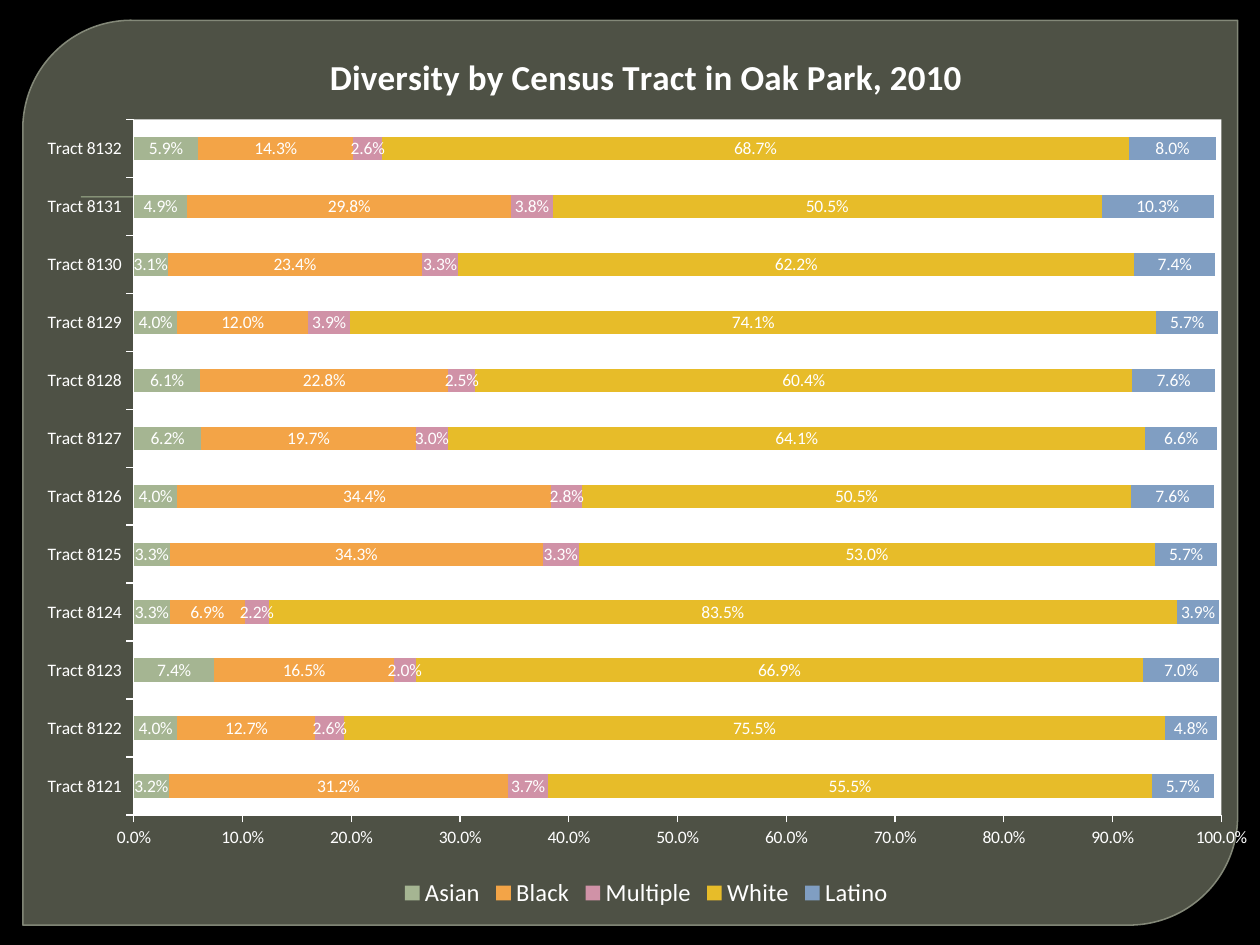
from lxml.etree import SubElement
from pptx import Presentation
from pptx.chart.data import CategoryChartData
from pptx.dml.color import RGBColor
from pptx.enum.chart import XL_CHART_TYPE, XL_LABEL_POSITION, XL_LEGEND_POSITION, XL_TICK_MARK
from pptx.enum.shapes import MSO_SHAPE
from pptx.oxml import parse_xml
from pptx.oxml.ns import nsdecls, qn
from pptx.util import Cm, Pt

BLACK = RGBColor(0x00, 0x00, 0x00)
WHITE = RGBColor(0xFF, 0xFF, 0xFF)
OLIVE = RGBColor(0x78, 0x7D, 0x6B)
OLIVE_EDGE = RGBColor(0x8F, 0x94, 0x83)
SAGE = RGBColor(0xA5, 0xB5, 0x92)
ORANGE = RGBColor(0xF3, 0xA4, 0x47)
ROSE = RGBColor(0xD0, 0x92, 0xA7)
GOLD = RGBColor(0xE7, 0xBC, 0x29)
BLUE = RGBColor(0x80, 0x9E, 0xC2)

FONT = "Calibri"
PERCENT = "0.0%"
TITLE = "Diversity by Census Tract in Oak Park, 2010"
TRACTS = [f"Tract {number}" for number in range(8121, 8133)]
GROUPS = [
    ("Asian", SAGE, [3.2, 4.0, 7.4, 3.3, 3.3, 4.0, 6.2, 6.1, 4.0, 3.1, 4.9, 5.9]),
    ("Black", ORANGE, [31.2, 12.7, 16.5, 6.9, 34.3, 34.4, 19.7, 22.8, 12.0, 23.4, 29.8, 14.3]),
    ("Multiple", ROSE, [3.7, 2.6, 2.0, 2.2, 3.3, 2.8, 3.0, 2.5, 3.9, 3.3, 3.8, 2.6]),
    ("White", GOLD, [55.5, 75.5, 66.9, 83.5, 53.0, 50.5, 64.1, 60.4, 74.1, 62.2, 50.5, 68.7]),
    ("Latino", BLUE, [5.7, 4.8, 7.0, 3.9, 5.7, 7.6, 6.6, 7.6, 5.7, 7.4, 10.3, 8.0]),
]
PLOT_LAYOUT = {"x": 0.09, "y": 0.11, "w": 0.87, "h": 0.78}


def set_font(font, size, bold=False):
    font.name = FONT
    font.size = Pt(size)
    font.bold = bold
    font.color.rgb = WHITE


def set_opacity(color_parent, percent):
    color = color_parent.find(f".//{qn('a:srgbClr')}")
    SubElement(color, qn("a:alpha"), val=str(percent * 1000))


def add_panel(slide):
    panel = slide.shapes.add_shape(
        MSO_SHAPE.ROUND_2_DIAG_RECTANGLE, Cm(0.46), Cm(0.41), Cm(24.49), Cm(18.24))
    panel.adjustments[0] = 0.12
    panel.adjustments[1] = 0
    panel.shadow.inherit = False
    panel.fill.solid()
    panel.fill.fore_color.rgb = OLIVE
    panel.line.color.rgb = OLIVE_EDGE
    panel.line.width = Pt(0.87)
    properties = panel._element.spPr
    set_opacity(properties.find(qn("a:solidFill")), 65)
    set_opacity(properties.find(qn("a:ln")), 88)


def add_rule(slide):
    rule = slide.shapes.add_shape(MSO_SHAPE.RECTANGLE, Cm(1.63), Cm(3.96), Cm(22.23), Cm(0.02))
    rule.shadow.inherit = False
    rule.fill.solid()
    rule.fill.fore_color.rgb = SAGE
    rule.line.fill.background()


def format_plot_area(chart):
    plot_area = chart._chartSpace.chart.plotArea
    for layout in plot_area.findall(qn("c:layout")):
        plot_area.remove(layout)
    modes = '<c:xMode val="edge"/><c:yMode val="edge"/>'
    sizes = "".join(f'<c:{key} val="{value}"/>' for key, value in PLOT_LAYOUT.items())
    plot_area.insert(0, parse_xml(
        f'<c:layout {nsdecls("c")}><c:manualLayout><c:layoutTarget val="inner"/>'
        f'{modes}{sizes}</c:manualLayout></c:layout>'))
    plot_area.append(parse_xml(
        f'<c:spPr {nsdecls("c", "a")}><a:solidFill><a:srgbClr val="{WHITE}"/>'
        '</a:solidFill><a:ln><a:noFill/></a:ln></c:spPr>'))


def add_diversity_chart(slide):
    data = CategoryChartData(number_format=PERCENT)
    data.categories = TRACTS
    for name, _, percentages in GROUPS:
        data.add_series(name, [round(value / 100, 3) for value in percentages])
    chart = slide.shapes.add_chart(
        XL_CHART_TYPE.BAR_STACKED, Cm(0.43), Cm(0.43), Cm(25.2), Cm(17.98), data).chart
    set_font(chart.font, 10)

    chart.has_title = True
    chart.chart_title.text_frame.text = TITLE
    set_font(chart.chart_title.text_frame.paragraphs[0].font, 20, bold=True)
    chart.chart_title.include_in_layout = False

    chart.has_legend = True
    chart.legend.position = XL_LEGEND_POSITION.BOTTOM
    chart.legend.include_in_layout = False
    set_font(chart.legend.font, 14)

    for axis in (chart.category_axis, chart.value_axis):
        axis.has_major_gridlines = False
        axis.major_tick_mark = XL_TICK_MARK.OUTSIDE
        axis.minor_tick_mark = XL_TICK_MARK.NONE
        axis.format.line.color.rgb = WHITE
        set_font(axis.tick_labels.font, 10)
    chart.value_axis.minimum_scale = 0
    chart.value_axis.maximum_scale = 1
    chart.value_axis.major_unit = 0.1
    chart.value_axis.tick_labels.number_format = PERCENT
    chart.value_axis.tick_labels.number_format_is_linked = False

    plot = chart.plots[0]
    plot.gap_width = 150
    plot.overlap = 100
    plot.vary_by_categories = False
    for series, (_, color, _) in zip(plot.series, GROUPS):
        series.format.fill.solid()
        series.format.fill.fore_color.rgb = color
        labels = series.data_labels
        labels.show_value = True
        labels.position = XL_LABEL_POSITION.CENTER
        labels.number_format = PERCENT
        labels.number_format_is_linked = False
        set_font(labels.font, 10)
    format_plot_area(chart)


def main():
    presentation = Presentation()
    presentation.slide_width = Cm(25.4)
    presentation.slide_height = Cm(19.05)
    slide = presentation.slides.add_slide(presentation.slide_layouts[6])
    slide.background.fill.solid()
    slide.background.fill.fore_color.rgb = BLACK
    add_panel(slide)
    add_rule(slide)
    add_diversity_chart(slide)
    presentation.save("out.pptx")


if __name__ == "__main__":
    main()
